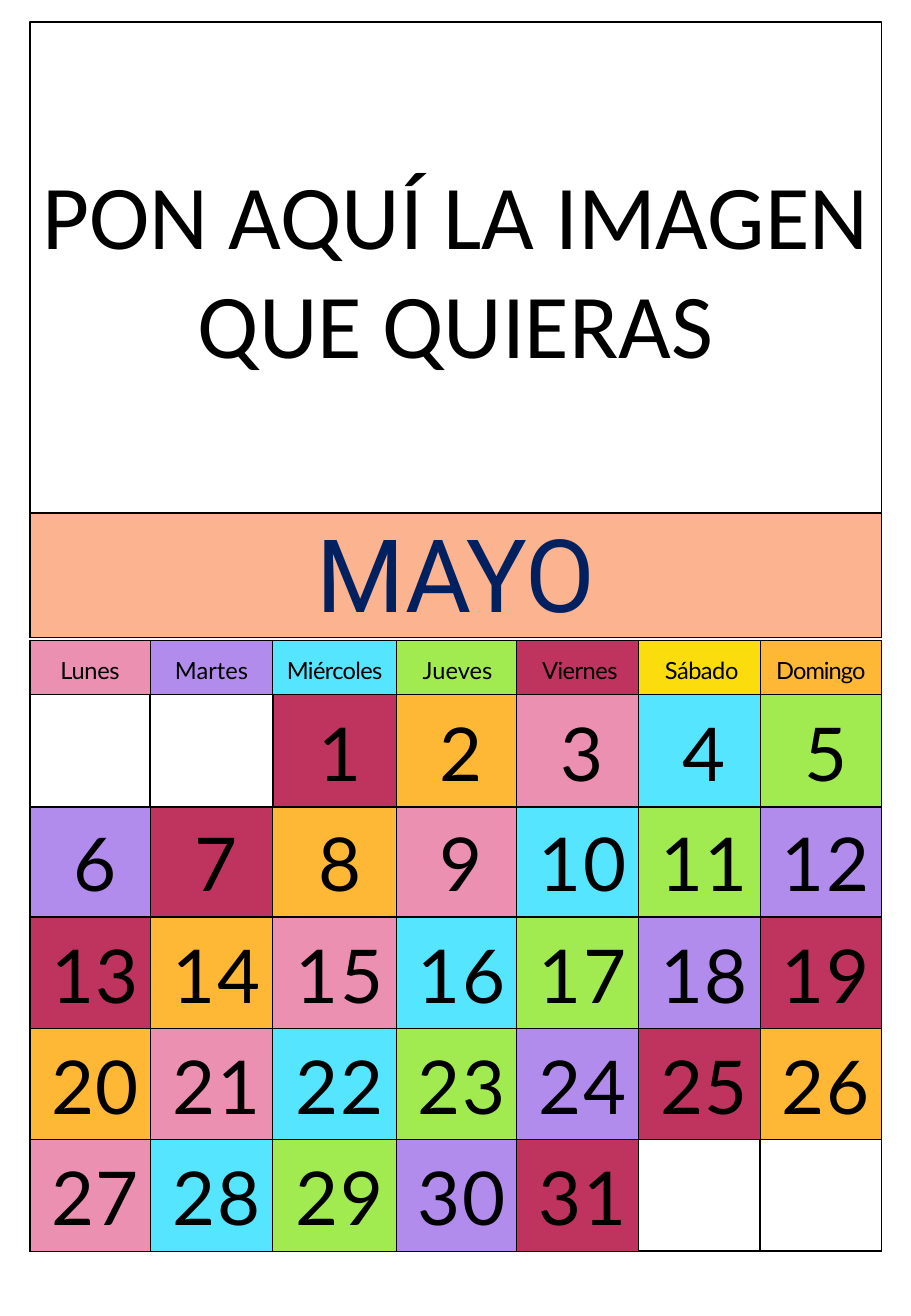
import pptx
import pptx.dml.color
import pptx.enum.shapes
import pptx.enum.text
import pptx.oxml
import pptx.oxml.ns
import pptx.util

Pt = pptx.util.Pt
BLACK, WHITE, NAVY, PEACH = "000000", "FFFFFF", "002060", "FBB390"
RED, ORANGE, PINK = "BE345E", "FFB836", "EB90B0"
CYAN, GREEN, VIOLET, YELLOW = "55E5FF", "A1EB51", "B18CEC", "FBDD0D"
DAY_COLORS = [RED, ORANGE, PINK, CYAN, GREEN, VIOLET]
WEEKDAYS = [
    ("Lunes", PINK, -0.2, 0), ("Martes", VIOLET, 0, 0),
    ("Miércoles", CYAN, -0.4, 0), ("Jueves", GREEN, 0, 1.4),
    ("Viernes", RED, -0.3, 2.9), ("Sábado", YELLOW, -0.3, 2.9),
    ("Domingo", ORANGE, -0.6, 0),
]
COL_WIDTHS = [71.2, 72.8, 73.2, 71.2, 72.2, 72.2, 72]
ROW_HEIGHTS = [32, 66.8, 65.2, 66, 66, 66]
WEEK_INSETS = [2.9, 1.4, 2.2, 2.2, 2.2]
FIRST_COL, LAST_DAY = 2, 31
LEFT, WIDTH = 17.8, 504.8
THIN, THICK = 0.75, 1


def rgb(color):
    return pptx.dml.color.RGBColor.from_string(color)


class Calendar:
    """Draws the elements of a monthly calendar on one slide."""

    def __init__(self, prs, font):
        self.s = prs.slides.add_slide(prs.slide_layouts[6])
        self.font = font

    def text(self, tf, text, size, color=BLACK, font=None, spacing=0, indent=0, before=0):
        p = tf.paragraphs[0]
        p.alignment = pptx.enum.text.PP_ALIGN.CENTER
        p.space_before = Pt(before)
        if indent:
            p._p.get_or_add_pPr().set("marL", str(Pt(indent)))
        r = p.add_run()
        r.text = text
        r.font.name = font or self.font
        r.font.size = Pt(size)
        r.font.color.rgb = rgb(color)
        if spacing:
            r._r.get_or_add_rPr().set("spc", str(round(spacing * 100)))

    def box(self, x, y, w, h, text, size, font):
        sp = self.s.shapes.add_shape(
            pptx.enum.shapes.MSO_SHAPE.RECTANGLE, Pt(x), Pt(y), Pt(w), Pt(h))
        sp.shadow.inherit = False
        sp.fill.solid()
        sp.fill.fore_color.rgb = rgb(WHITE)
        sp.line.color.rgb = rgb(BLACK)
        sp.line.width = Pt(THICK)
        sp.text_frame.word_wrap = True
        sp.text_frame.vertical_anchor = pptx.enum.text.MSO_ANCHOR.MIDDLE
        self.text(sp.text_frame, text, size, font=font)

    def table(self, x, y, widths, heights):
        table = self.s.shapes.add_table(
            len(heights), len(widths), Pt(x), Pt(y), Pt(sum(widths)), Pt(sum(heights))).table
        table.first_row = table.horz_banding = False
        for col, width in zip(table.columns, widths):
            col.width = Pt(width)
        for row, height in zip(table.rows, heights):
            row.height = Pt(height)
        return table

    def cell(self, cell, fill, borders, inset=0):
        cell.margin_left = cell.margin_right = cell.margin_bottom = 0
        cell.margin_top = Pt(inset)
        cell.vertical_anchor = pptx.enum.text.MSO_ANCHOR.MIDDLE
        for side, width in zip("LRTB", borders):
            cell._tc.get_or_add_tcPr().append(pptx.oxml.parse_xml(
                f'<a:ln{side} {pptx.oxml.ns.nsdecls("a")} w="{Pt(width)}"><a:solidFill>'
                f'<a:srgbClr val="{BLACK}"/></a:solidFill></a:ln{side}>'))
        cell.fill.solid()
        cell.fill.fore_color.rgb = rgb(fill)

    def month(self, name, y, h):
        cell = self.table(LEFT, y, [WIDTH], [h]).cell(0, 0)
        self.cell(cell, PEACH, (THIN, THIN, THIN, THICK), 3.6)
        self.text(cell.text_frame, name, 60, NAVY, "Roboto", before=4.2)

    def days(self, y):
        table = self.table(LEFT, y, COL_WIDTHS, ROW_HEIGHTS)
        places = [(row, col) for row in range(1, 6) for col in range(7)]
        numbers = {place: i - FIRST_COL + 1 for i, place in enumerate(places)}
        thick = {place for place, day in numbers.items() if day <= 1 or day > LAST_DAY}

        def borders(row, col):
            sides = [(row, col - 1), (row, col + 1), (row - 1, col), (row + 1, col)]
            return [THICK if thick & {(row, col), side} else THIN for side in sides]

        for col, (name, color, spacing, indent) in enumerate(WEEKDAYS):
            cell = table.cell(0, col)
            self.cell(cell, color, borders(0, col), 3.6)
            self.text(cell.text_frame, name, 14, spacing=spacing, indent=indent, before=4.2)
        for (row, col), day in numbers.items():
            cell = table.cell(row, col)
            if 1 <= day <= LAST_DAY:
                color = DAY_COLORS[(day - 1) % len(DAY_COLORS)]
                self.cell(cell, color, borders(row, col), WEEK_INSETS[row - 1])
                self.text(cell.text_frame, str(day), 44, spacing=1, indent=5.8, before=4.8)
            else:
                self.cell(cell, WHITE, borders(row, col))


def main():
    prs = pptx.Presentation()
    prs.slide_width, prs.slide_height = Pt(540), Pt(780)
    calendar = Calendar(prs, "Lato")
    calendar.month("MAYO", 304, 74)
    calendar.days(379.6)
    calendar.box(LEFT, 13, WIDTH, 291, "PON AQUÍ LA IMAGEN QUE QUIERAS", 54, "Calibri")
    prs.save("out.pptx")


if __name__ == "__main__":
    main()
